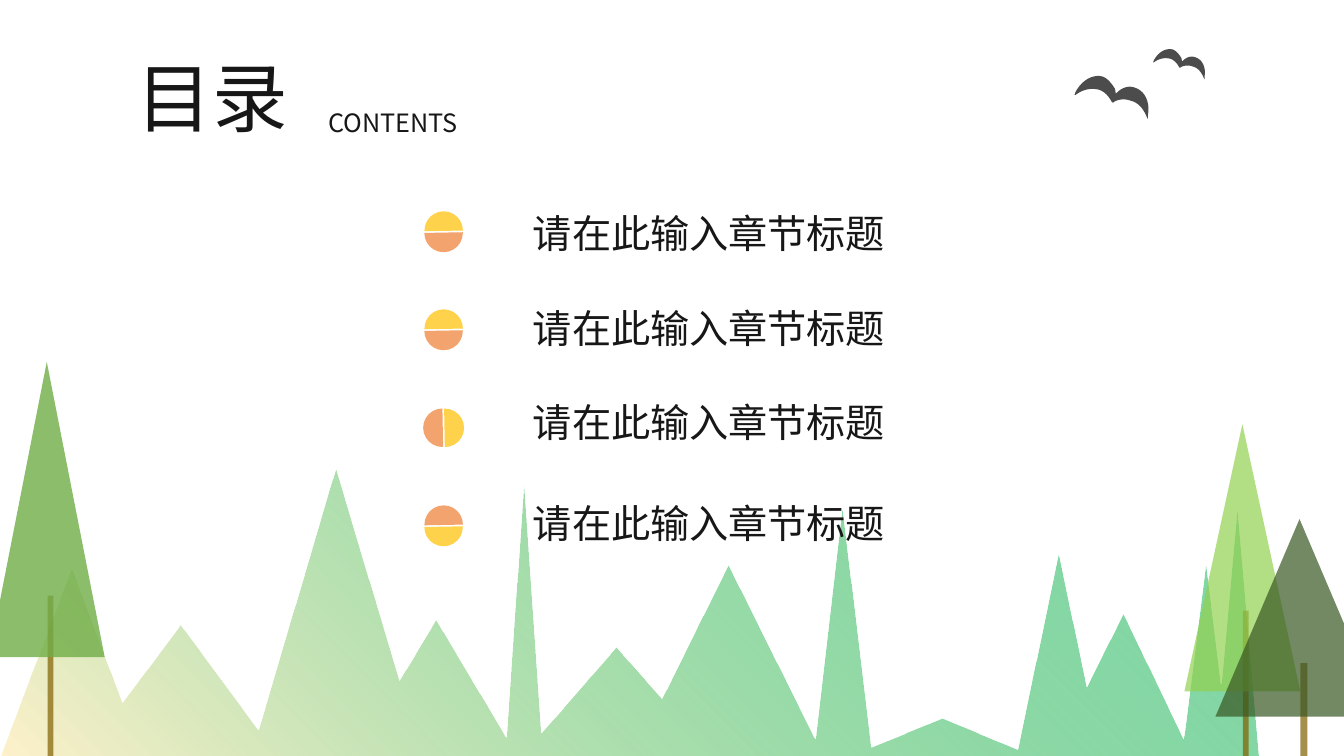
from math import cos, radians, sin

from lxml.etree import SubElement
from pptx import Presentation
from pptx.dml.color import RGBColor
from pptx.enum.shapes import MSO_SHAPE
from pptx.enum.text import MSO_AUTO_SIZE, PP_ALIGN
from pptx.oxml.ns import qn
from pptx.util import Cm, Pt

WIDE, HIGH = 33.87, 19.05
FONT = "Noto Sans CJK SC"
INK, YELLOW, ORANGE, TRUNK = "181717", "FFC000", "ED7D31", "806000"

# Peaks and valleys from left to right, closed along the lower edge
RIDGE = [
    (0, 19.13), (1.83, 14.33), (3.1, 17.7), (4.57, 15.75), (6.53, 18.39),
    (8.48, 11.84), (10.08, 17.15), (11, 15.62), (12.78, 18.59),
    (13.21, 12.27), (13.64, 18.47), (15.54, 16.31), (16.69, 17.6),
    (18.36, 14.25), (20.55, 18.62), (21.23, 12.85), (21.95, 18.82),
    (23.75, 18.08), (25.65, 18.87), (26.67, 13.97), (27.38, 17.32),
    (28.3, 15.47), (29.82, 18.62), (30.38, 14.25), (30.76, 17.32),
    (31.17, 12.88), (31.72, 19.13),
]

# Wing outline from the left tip: one point is a line, three are a curve
WINGS = [
    [(0, 0)],
    [(0.03, -0.08)],
    [(0.18, -0.36), (0.46, -0.53), (0.71, -0.46)],
    [(0.84, -0.41), (0.94, -0.28), (1.02, -0.15)],
    [(1.04, -0.03)],
    [(1.12, -0.1)],
    [(1.24, -0.2), (1.4, -0.23), (1.52, -0.18)],
    [(1.78, -0.1), (1.91, 0.2), (1.85, 0.51)],
    [(1.85, 0.61)],
    [(1.83, 0.58)],
    [(1.75, 0.38), (1.63, 0.2), (1.42, 0.15)],
    [(1.3, 0.1), (1.12, 0.1), (0.99, 0.18)],
    [(0.97, 0.2)],
    [(0.94, 0.18)],
    [(0.86, 0.03), (0.76, -0.08), (0.61, -0.13)],
    [(0.41, -0.18), (0.2, -0.13), (0.03, 0)],
]


def color(code):
    return RGBColor.from_string(code)


def apply(item, style):
    for name, value in style.items():
        setattr(item, name, value)


def fade(shape, alpha):
    """Set the opacity, in percent, of the first fill colour."""
    tone = next(shape.element.spPr.iter(qn("a:srgbClr")))
    SubElement(tone, qn("a:alpha"), val=str(alpha * 1000))


def bare(shape):
    shape.shadow.inherit = False
    shape.line.fill.background()


def paint(shape, code, alpha):
    bare(shape)
    shape.fill.solid()
    shape.fill.fore_color.rgb = color(code)
    fade(shape, alpha)


def block(shapes, kind, box, code, alpha=70):
    shape = shapes.add_shape(kind, *map(Cm, box))
    paint(shape, code, alpha)
    return shape


def outline(slide, points):
    dots = [(Cm(x), Cm(y)) for x, y in points]
    path = slide.shapes.build_freeform(*dots[0])
    path.add_line_segments(dots[1:], close=True)
    return path.convert_to_shape()


def label(slide, box, text, size, wrap=True, align=None):
    frame = slide.shapes.add_textbox(*map(Cm, box)).text_frame
    apply(frame, {"word_wrap": wrap, "auto_size": MSO_AUTO_SIZE.SHAPE_TO_FIT_TEXT})
    para = frame.paragraphs[0]
    para.alignment = align
    run = para.add_run()
    run.text = text
    apply(run.font, {"name": FONT, "size": Pt(size)})
    run.font.color.rgb = color(INK)
    SubElement(run.font._element, qn("a:ea"), typeface=FONT)


def hills(slide, left, top):
    shape = outline(slide, [(left + x, top + y) for x, y in RIDGE])
    bare(shape)
    shape.fill.gradient()
    shape.fill.gradient_angle = 225
    for stop, code, place in zip(shape.fill.gradient_stops, ("00B050", "FFF2CC"), (0, 1)):
        stop.color.rgb = color(code)
        stop.position = place
    fade(shape, 50)


def tree(slide, box, trunk, code, alpha=70):
    """Place a crown in the box; trunk is its offset in x, y and its width."""
    left, top, _, _ = box
    dx, dy, width = trunk
    foot = top + dy
    block(slide.shapes, MSO_SHAPE.RECTANGLE, (left + dx, foot, width, HIGH - foot), TRUNK)
    block(slide.shapes, MSO_SHAPE.ISOSCELES_TRIANGLE, box, code, alpha)


def curve(start, ends, steps=10):
    """Points on a cubic curve, without its start."""
    knots = [start, *ends]
    for step in range(1, steps + 1):
        t = step / steps
        parts = ((1 - t) ** 3, 3 * t * (1 - t) ** 2, 3 * t * t * (1 - t), t ** 3)
        yield tuple(sum(p * k[axis] for p, k in zip(parts, knots)) for axis in (0, 1))


def bird(slide, left, top, scale=1):
    points = []
    for part in WINGS:
        points += part if len(part) == 1 else curve(points[-1], part)
    shape = outline(slide, [(left + x * scale, top + y * scale) for x, y in points])
    paint(shape, "000000", 70)


def ball(slide, mid, high, turn, size=0.97, gap=0.03):
    """Two half discs around a centre, the yellow one turned by turn."""
    group = slide.shapes.add_group_shape()
    for code, angle in ((YELLOW, turn), (ORANGE, (turn + 180) % 360)):
        left = mid - size / 2 - gap * cos(radians(angle))
        top = high - size / 2 - gap * sin(radians(angle))
        half = block(group.shapes, MSO_SHAPE.CHORD, (left, top, size, size), code)
        half.rotation = angle
        half.adjustments[0], half.adjustments[1] = 52.702, 162


def header(slide, left, top):
    label(slide, (left + 4.83, top + 1.42, 3.84, 1.02), "CONTENTS", 18, wrap=False)
    label(slide, (left, top, 4.83, 2.57), "目录", 54, align=PP_ALIGN.JUSTIFY)


def agenda(slide, left, top):
    turns = (90, 90, 180, 270)
    drops = (0, 2.38, 4.75, 7.29)
    for row, turn in enumerate(turns):
        ball(slide, left + 0.5, top + 0.68 + row * 2.47, turn)
    for drop in drops:
        label(slide, (left + 2.5, top + drop, 10.01, 1.45), "请在此输入章节标题", 28)


def main():
    deck = Presentation()
    apply(deck, {"slide_width": Cm(WIDE), "slide_height": Cm(HIGH)})
    slide = deck.slides.add_slide(deck.slide_layouts[6])
    hills(slide, 0, 0)
    tree(slide, (-0.28, 9.12, 2.92, 7.44), (1.48, 5.89, 0.15), "70AD47", 80)
    tree(slide, (29.85, 10.69, 2.92, 6.73), (1.47, 4.7, 0.15), "92D050")
    bird(slide, 27.08, 2.39)
    bird(slide, 29.06, 1.57, 0.7)
    header(slide, 3.2, 1.17)
    agenda(slide, 10.68, 5.16)
    tree(slide, (30.63, 13.08, 4.24, 4.98), (2.14, 3.63, 0.18), "385723")
    deck.save("out.pptx")


if __name__ == "__main__":
    main()
